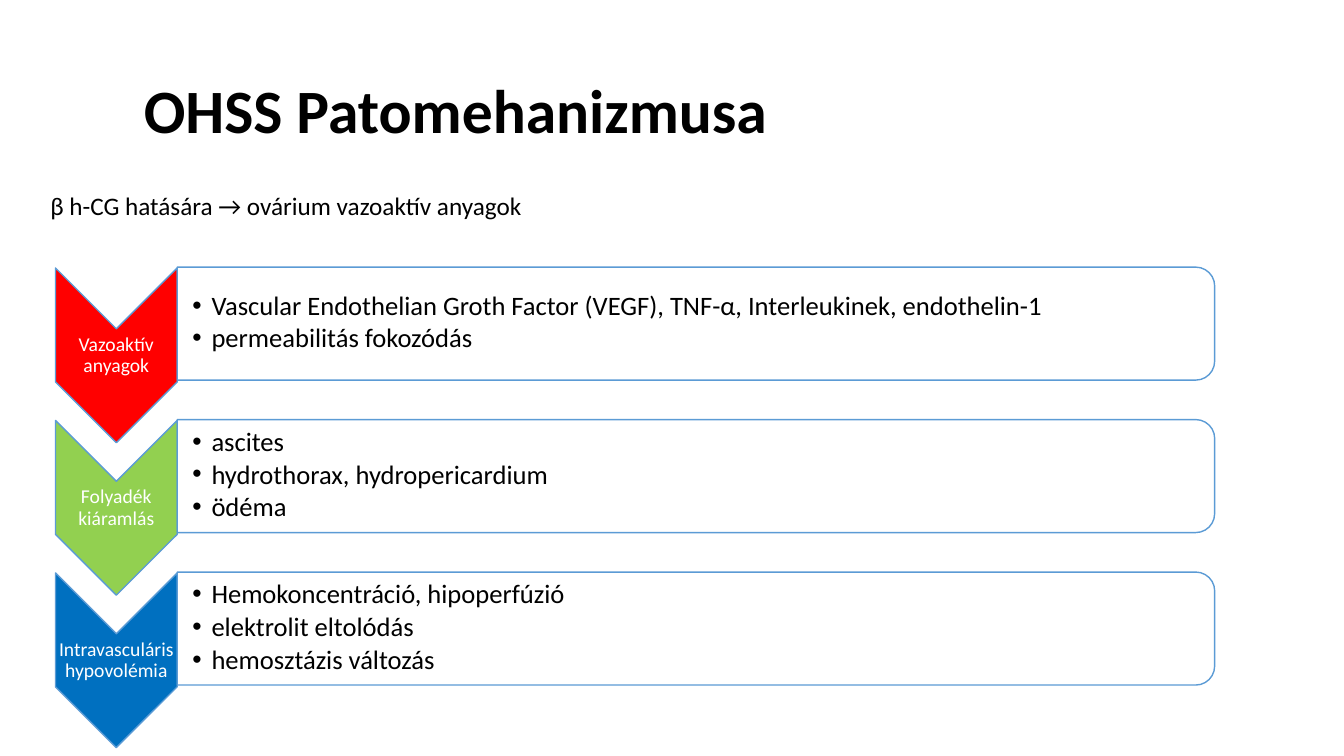
"""Build the slide on the pathomechanism of OHSS."""
from dataclasses import dataclass

from lxml.etree import SubElement
from pptx import Presentation
from pptx.dml.color import RGBColor
from pptx.enum.shapes import MSO_SHAPE as Shape
from pptx.enum.text import MSO_ANCHOR as Anchor, MSO_AUTO_SIZE as AutoSize, PP_ALIGN as Align
from pptx.oxml.ns import qn
from pptx.util import Inches, Pt

COLS, ROWS = 160, 90
W, H = Inches(13.33), Inches(7.5)
COLORS = {"red": "FF0000", "green": "92D050", "blue": "0070C0",
          "outline": "5B9BD5", "white": "FFFFFF", "black": "000000"}


@dataclass
class Box:
    """Hold a place on the grid, in columns and rows."""
    col: float
    row: float
    cols: float
    rows: float

    def emu(self) -> tuple[int, int, int, int]:
        """Return left, top, width and height in EMU."""
        return (round(self.col * W / COLS), round(self.row * H / ROWS),
                round(self.cols * W / COLS), round(self.rows * H / ROWS))


@dataclass
class Stage:
    """Describe one step: its arrow and its list."""
    label: str
    color: str
    points: list[str]


STAGES = [
    Stage("Vazoaktív anyagok", "red",
          ["Vascular Endothelian Groth Factor (VEGF), TNF-α, Interleukinek, endothelin-1",
           "permeabilitás fokozódás"]),
    Stage("Folyadék kiáramlás", "green",
          ["ascites", "hydrothorax, hydropericardium", "ödéma"]),
    Stage("Intravasculáris hypovolémia", "blue",
          ["Hemokoncentráció, hipoperfúzió", "elektrolit eltolódás", "hemosztázis változás"]),
]
FIRST_ROW, PITCH = 31.8, 18.15
ARROW_COL, ARROW_COLS, PANEL_COL = 6.6, 14.5, 21.1
TIGHT = {"margin_left": Inches(0.01), "margin_right": Inches(0.01),
         "margin_top": Inches(0.01), "margin_bottom": Inches(0.01),
         "vertical_anchor": Anchor.MIDDLE}
LIST_FRAME = {**TIGHT, "margin_left": Inches(0.15)}
LIST_PARA = {"alignment": Align.LEFT, "line_spacing": 0.9,
             "space_before": Pt(0), "space_after": Pt(2.85)}
LABEL_PARA = {"alignment": Align.CENTER, "line_spacing": 0.9, "space_after": Pt(4.9)}


def apply(target, values: dict) -> None:
    """Set attributes from a dict of format values."""
    for name, value in values.items():
        setattr(target, name, value)


def place(sp, box: Box) -> None:
    """Move a shape to its grid box."""
    apply(sp, dict(zip(("left", "top", "width", "height"), box.emu())))


def write(sp, lines: list[str], size: float, color: str, frame: dict, para: dict,
          bold: bool = False) -> None:
    """Fill a shape with formatted paragraphs."""
    tf = sp.text_frame
    apply(tf, {"word_wrap": True, "auto_size": AutoSize.NONE, **frame})
    for i, line in enumerate(lines):
        p = tf.add_paragraph() if i else tf.paragraphs[0]
        apply(p, para)
        r = p.add_run()
        r.text = line
        apply(r.font, {"name": "Calibri", "size": Pt(size), "bold": bold})
        r.font.color.rgb = RGBColor.from_string(COLORS[color])


def indent(p, left: float, first: float = 0, bullet: str = "") -> None:
    """Set the indents in inches and the bullet of a paragraph."""
    pPr = p._p.get_or_add_pPr()
    pPr.set("marL", str(Inches(left)))
    pPr.set("indent", str(Inches(first)))
    if bullet:
        SubElement(pPr, qn("a:buFont"), typeface="Arial")
        SubElement(pPr, qn("a:buChar"), char=bullet)


def turned(s, kind: Shape, box: Box, color: str):
    """Draw a preset shape turned a quarter so that it fills the box."""
    left, top, width, height = box.emu()
    shift = (width - height) // 2
    sp = s.shapes.add_shape(kind, left + shift, top - shift, height, width)
    sp.rotation = 90
    sp.shadow.inherit = False
    sp.fill.solid()
    sp.fill.fore_color.rgb = RGBColor.from_string(COLORS[color])
    sp.line.color.rgb = RGBColor.from_string(COLORS["outline"])
    sp.line.width = Pt(1)
    return sp


def draw_stage(s, stage: Stage, body, row: float) -> None:
    """Draw the arrow, the panel and the list of one stage."""
    arrow = turned(s, Shape.CHEVRON, Box(ARROW_COL, row + 0.1, ARROW_COLS, 20.8), stage.color)
    panel = turned(s, Shape.ROUND_2_SAME_RECTANGLE,
                   Box(PANEL_COL, row, 123.5, 13.45), "white")
    SubElement(panel.element.spPr.find(".//" + qn("a:srgbClr")), qn("a:alpha"), val="90000")
    for sp in (arrow, panel):
        body.element.addprevious(sp.element)
    label = s.shapes.add_textbox(*Box(ARROW_COL, row + 7.45, ARROW_COLS, 6.2).emu())
    write(label, [stage.label], 14, "white", TIGHT, LABEL_PARA)
    place(body, Box(PANEL_COL, row + 0.6, 122.9, 12.1))
    write(body, stage.points, 19, "black", LIST_FRAME, LIST_PARA)
    for p in body.text_frame.paragraphs:
        indent(p, 0.19, -0.19, "•")


def main() -> None:
    """Build and save the slide."""
    prs = Presentation()
    prs.slide_width, prs.slide_height = W, H
    s = prs.slides.add_slide(prs.slide_layouts[4])
    title, intro, *bodies = s.placeholders
    place(title, Box(11, 4.8, 138, 17.4))
    write(title, ["OHSS Patomehanizmusa"], 44, "black", {"vertical_anchor": Anchor.MIDDLE},
          {"alignment": Align.LEFT, "line_spacing": 0.9}, bold=True)
    indent(title.text_frame.paragraphs[0], 0.41)
    place(intro, Box(4.8, 22.1, 64.5, 4.8))
    write(intro, ["β h-CG hatására → ovárium vazoaktív anyagok"], 18, "black",
          {"vertical_anchor": Anchor.TOP}, {"alignment": Align.LEFT, "space_before": Pt(0)})
    for i, (stage, body) in enumerate(zip(STAGES, bodies)):
        draw_stage(s, stage, body, FIRST_ROW + i * PITCH)
    prs.save("out.pptx")


if __name__ == "__main__":
    main()
